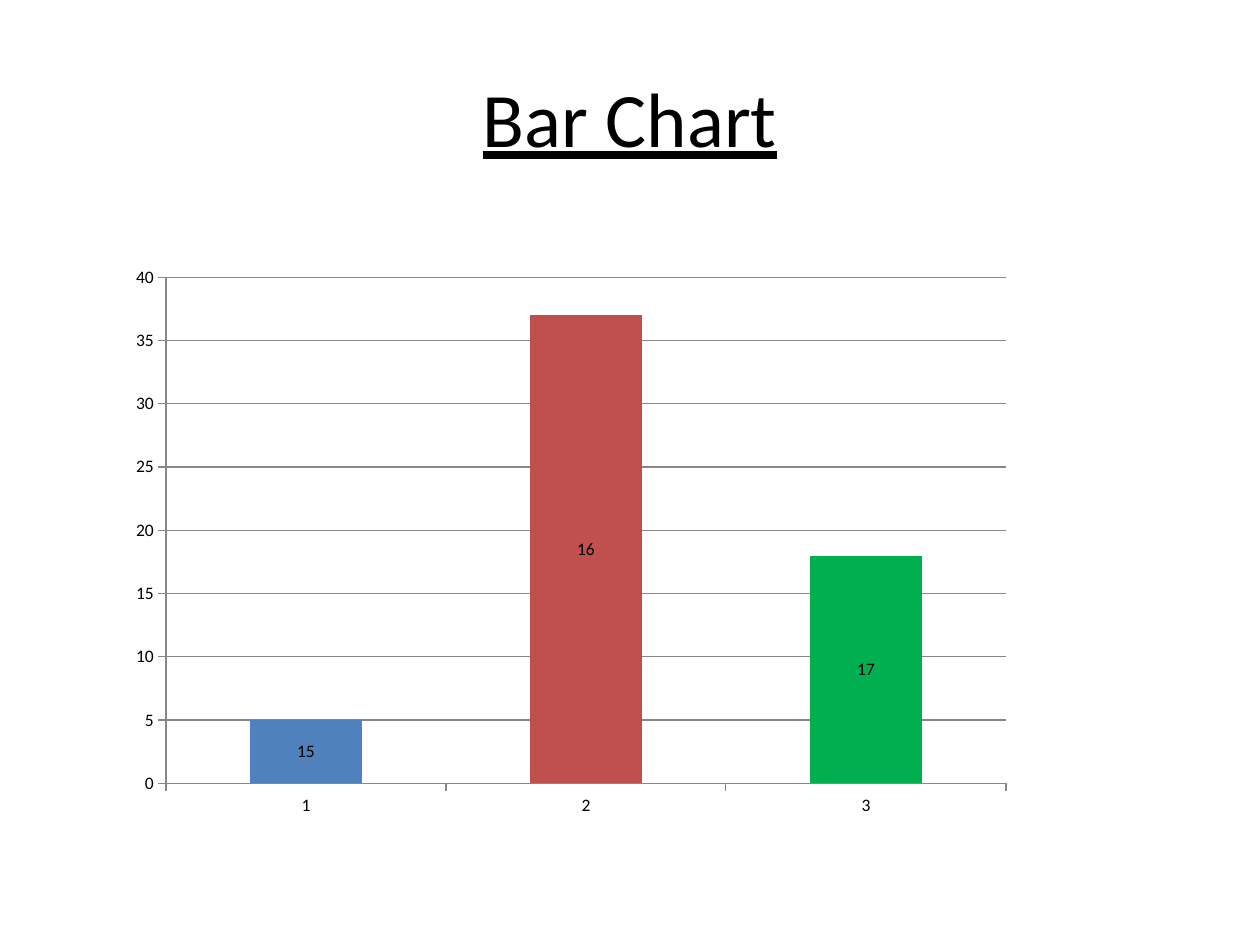
import pptx
import pptx.chart.data
import pptx.dml.color
import pptx.enum.chart
import pptx.enum.text
import pptx.util

PX_PER_INCH = 126
FONT = "Calibri"
COLORS = {
    "text": "000000",
    "grid": "878787",
    "blue": "4F81BD",
    "red": "C0504D",
    "green": "00B050",
}
# category, value, label, color
BARS = [
    ("1", 5, "15", "blue"),
    ("2", 37, "16", "red"),
    ("3", 18, "17", "green"),
]


def px(length):
    return pptx.util.Emu(round(length * 914400 / PX_PER_INCH))


def color(name):
    return pptx.dml.color.RGBColor.from_string(COLORS[name])


def style_font(font, size):
    font.name = FONT
    font.size = pptx.util.Pt(size)
    font.color.rgb = color("text")


def style_line(line):
    line.color.rgb = color("grid")
    line.width = pptx.util.Pt(0.75)


def place_title(slide, left, top, width, height):
    title = slide.shapes.title
    title.left, title.top = px(left), px(top)
    title.width, title.height = px(width), px(height)
    title.text_frame.text = "Bar Chart"
    title.text_frame.vertical_anchor = pptx.enum.text.MSO_ANCHOR.MIDDLE
    paragraph = title.text_frame.paragraphs[0]
    paragraph.alignment = pptx.enum.text.PP_ALIGN.CENTER
    style_font(paragraph.font, 44)
    paragraph.font.underline = True


def style_axes(chart):
    for axis in (chart.category_axis, chart.value_axis):
        axis.major_tick_mark = pptx.enum.chart.XL_TICK_MARK.OUTSIDE
        axis.minor_tick_mark = pptx.enum.chart.XL_TICK_MARK.NONE
        style_line(axis.format.line)
    value_axis = chart.value_axis
    value_axis.minimum_scale, value_axis.maximum_scale = 0, 40
    value_axis.major_unit = 5
    value_axis.has_major_gridlines = True
    style_line(value_axis.major_gridlines.format.line)


def style_bars(plot):
    """Color each bar and center its own label text in it."""
    center = pptx.enum.chart.XL_LABEL_POSITION.CENTER
    plot.gap_width = 150
    plot.vary_by_categories = False
    series = plot.series[0]
    series.format.fill.solid()
    series.format.fill.fore_color.rgb = color("blue")
    series.data_labels.show_value = True
    series.data_labels.position = center
    for index, (_, _, text, fill_name) in enumerate(BARS):
        point = series.points[index]
        point.format.fill.solid()
        point.format.fill.fore_color.rgb = color(fill_name)
        label = point.data_label
        label.text_frame.text = text
        style_font(label.text_frame.paragraphs[0].font, 10)
        label.position = center


def place_chart(slide, left, top, width, height):
    data = pptx.chart.data.CategoryChartData()
    data.categories = [bar[0] for bar in BARS]
    data.add_series("Series 1", [bar[1] for bar in BARS])
    chart = slide.shapes.add_chart(
        pptx.enum.chart.XL_CHART_TYPE.COLUMN_CLUSTERED,
        px(left), px(top), px(width), px(height), data,
    ).chart
    chart.has_title = False
    chart.has_legend = False
    style_font(chart.font, 10)
    style_axes(chart)
    style_bars(chart.plots[0])


def main():
    presentation = pptx.Presentation()
    presentation.slide_width = px(1260)
    presentation.slide_height = px(945)
    title_only = presentation.slide_layouts[5]
    slide = presentation.slides.add_slide(title_only)
    place_title(slide, 63, 38, 1134, 157)
    place_chart(slide, 118, 256, 906, 571)
    presentation.save("out.pptx")


if __name__ == "__main__":
    main()
